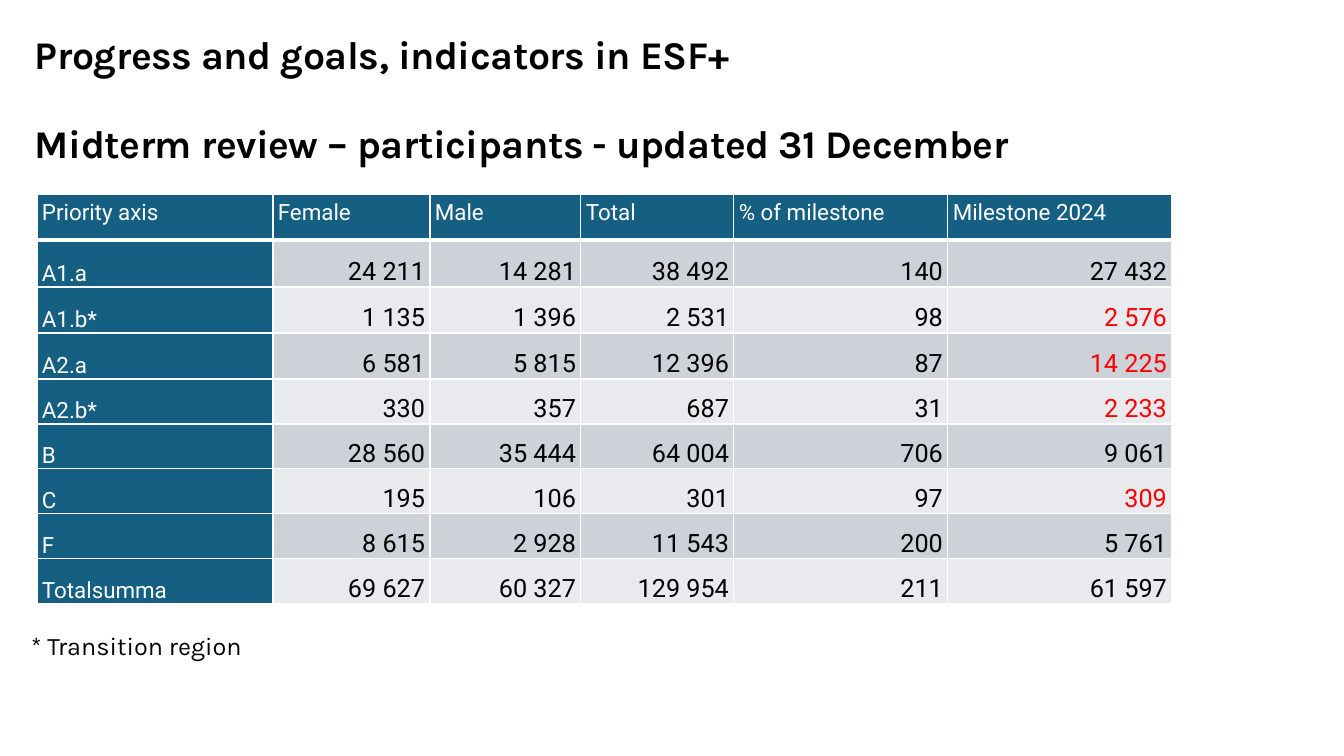
from dataclasses import dataclass

from lxml import etree
from pptx import Presentation
from pptx import util as u
from pptx.dml.color import RGBColor
from pptx.enum import shapes, text
from pptx.oxml.ns import qn

PX = 914400 / 100.8


@dataclass(frozen=True)
class Theme:
    black: str = "000000"
    white: str = "FFFFFF"
    red: str = "FF0000"
    header: str = "156082"
    bands: tuple = ("CCD2D8", "E8EAED")
    title_font: str = "Karla"
    table_font: str = "Roboto"
    title_size: int = 28
    value_size: int = 18
    label_size: int = 16


THEME = Theme()
TITLES = ("Progress and goals, indicators in ESF+",
          "Midterm review – participants - updated 31 December")
HEADINGS = ("Priority axis", "Female", "Male", "Total", "% of milestone", "Milestone 2024")
ROWS = (
    ("A1.a", "24 211", "14 281", "38 492", "140", "27 432"),
    ("A1.b*", "1 135", "1 396", "2 531", "98", "2 576"),
    ("A2.a", "6 581", "5 815", "12 396", "87", "14 225"),
    ("A2.b*", "330", "357", "687", "31", "2 233"),
    ("B", "28 560", "35 444", "64 004", "706", "9 061"),
    ("C", "195", "106", "301", "97", "309"),
    ("F", "8 615", "2 928", "11 543", "200", "5 761"),
    ("Totalsumma", "69 627", "60 327", "129 954", "211", "61 597"),
)
PERCENT, MILESTONE = 4, 5
COLUMN_WIDTHS = (236, 157, 151, 153, 214, 224)
ROW_HEIGHTS = (46, 47, 46, 46, 45, 45, 45, 45, 45)


def px(n):
    return u.Emu(round(n * PX))


def box(*lengths):
    return [px(n) for n in lengths]


def rgb(color):
    return RGBColor.from_string(color)


def write(p, words, *, font, size, color=THEME.black, bold=False, align="LEFT",
          line=None, before=None, after=None, tracking=None):
    """Add one formatted run to p; tracking is in hundredths of a point."""
    p.alignment = getattr(text.PP_ALIGN, align)
    if line:
        p.line_spacing = u.Pt(line)
    if before:
        p.space_before = u.Pt(before)
    if after:
        p.space_after = u.Pt(after)
    r = p.add_run()
    r.text = words
    r.font.name, r.font.size, r.font.bold = font, u.Pt(size), bold
    r.font.color.rgb = rgb(color)
    if tracking:
        r.font._element.set("spc", str(tracking))


def add_titles(slide):
    tf = slide.shapes.add_textbox(*box(25, 47, 1181, 299)).text_frame
    tf.word_wrap = True
    for i, title in enumerate(TITLES):
        p = tf.add_paragraph() if i else tf.paragraphs[0]
        write(p, title, font=THEME.title_font, size=THEME.title_size, bold=True,
              line=18, before=46 if i else None, tracking=-30)


def set_borders(cell, bottom):
    """Draw white cell edges, 1 pt wide except for the bottom one."""
    tc_pr = cell._tc.get_or_add_tcPr()
    for i, side in enumerate("LRTB"):
        width = u.Pt(bottom if side == "B" else 1)
        ln = etree.Element(qn(f"a:ln{side}"), w=str(int(width)))
        fill = etree.SubElement(ln, qn("a:solidFill"))
        etree.SubElement(fill, qn("a:srgbClr"), val=THEME.white)
        tc_pr.insert(i, ln)


def fill_cell(cell, words, *, fill, anchor="BOTTOM", bottom=1, **fmt):
    cell.margin_left = cell.margin_right = px(5)
    cell.margin_top = cell.margin_bottom = 0
    cell.vertical_anchor = getattr(text.MSO_ANCHOR, anchor)
    cell.fill.solid()
    cell.fill.fore_color.rgb = rgb(fill)
    set_borders(cell, bottom)
    write(cell.text_frame.paragraphs[0], words, font=THEME.table_font,
          line=13, after=13, **fmt)


def add_progress_table(slide):
    table = slide.shapes.add_table(
        len(ROW_HEIGHTS), len(COLUMN_WIDTHS),
        *box(37, 194, sum(COLUMN_WIDTHS), sum(ROW_HEIGHTS))).table
    table.first_row = table.horz_banding = False
    for column, width in zip(table.columns, COLUMN_WIDTHS):
        column.width = px(width)
    for row, height in zip(table.rows, ROW_HEIGHTS):
        row.height = px(height)

    label = dict(fill=THEME.header, size=THEME.label_size, color=THEME.white)
    for c, heading in enumerate(HEADINGS):
        fill_cell(table.cell(0, c), heading, anchor="MIDDLE", bottom=3, **label)
    for r, (axis, *values) in enumerate(ROWS, 1):
        fill_cell(table.cell(r, 0), axis, **label)
        missed = int(values[PERCENT - 1]) < 100
        for c, value in enumerate(values, 1):
            color = THEME.red if missed and c == MILESTONE else THEME.black
            fill_cell(table.cell(r, c), value, fill=THEME.bands[(r - 1) % 2],
                      size=THEME.value_size, color=color, align="RIGHT")


def add_footnote(slide):
    sp = slide.shapes.add_shape(shapes.MSO_SHAPE.RECTANGLE, *box(7, 631, 259, 29))
    sp.shadow.inherit = False
    sp.fill.solid()
    sp.fill.fore_color.rgb = rgb(THEME.white)
    sp.line.fill.background()
    tf = sp.text_frame
    tf.word_wrap = True
    tf.vertical_anchor = text.MSO_ANCHOR.MIDDLE
    write(tf.paragraphs[0], "* Transition region", font=THEME.title_font,
          size=THEME.value_size, align="CENTER")


def main():
    prs = Presentation()
    prs.slide_width, prs.slide_height = box(1344, 756)
    slide = prs.slides.add_slide(prs.slide_layouts[6])
    add_titles(slide)
    add_progress_table(slide)
    add_footnote(slide)
    prs.save("out.pptx")


if __name__ == "__main__":
    main()
